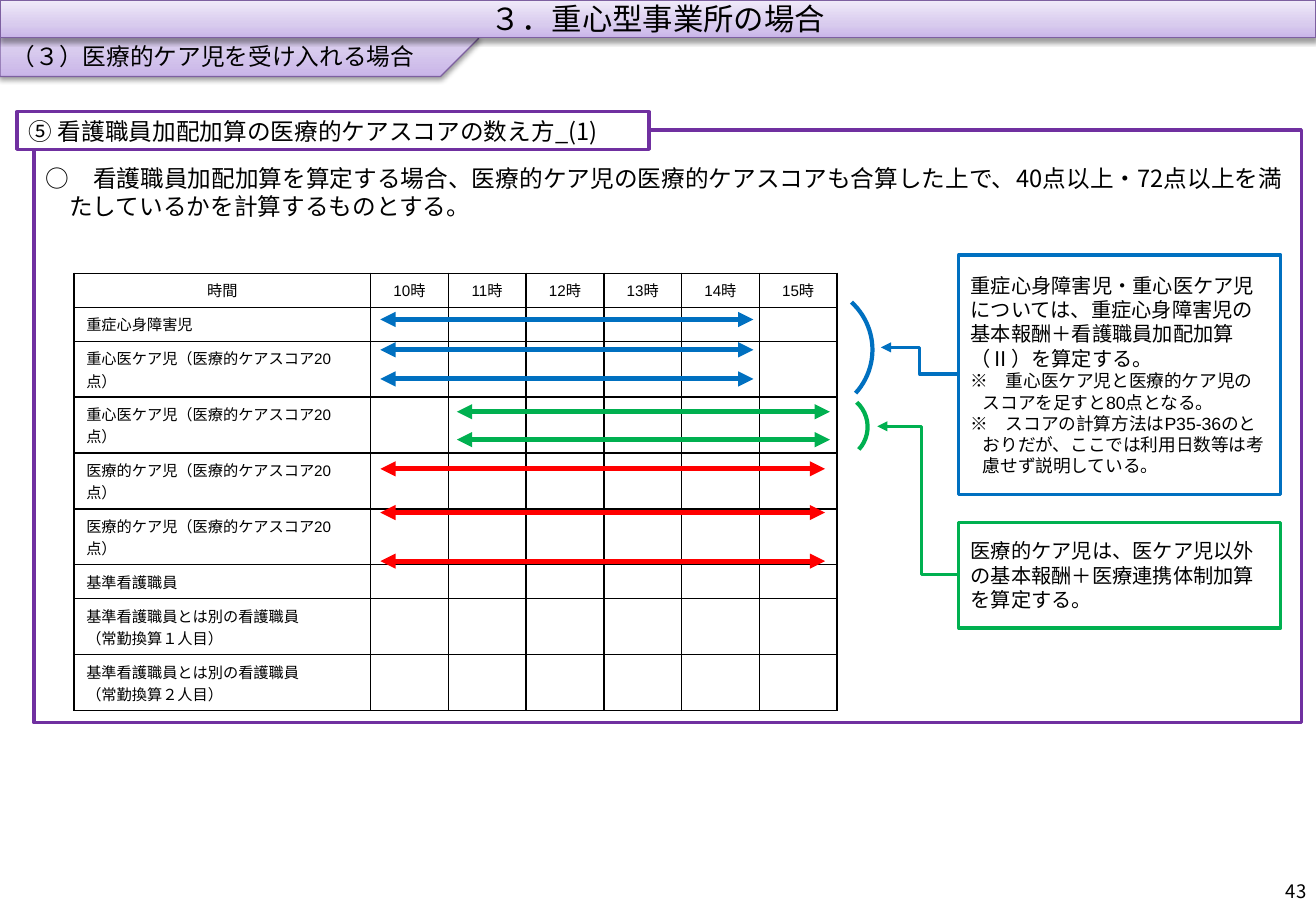
from lxml import etree
from pptx import Presentation
from pptx import util as u
from pptx.dml.color import RGBColor
from pptx.enum import shapes, text
from pptx.oxml import ns, parse_xml

BLACK = RGBColor(0x00, 0x00, 0x00)
WHITE = RGBColor(0xFF, 0xFF, 0xFF)
PURPLE = RGBColor(0x70, 0x30, 0xA0)
HEADER_LINE = RGBColor(0x7D, 0x60, 0xA0)
HEADER_STOPS = [(0, RGBColor(0xC9, 0xB5, 0xE8)), (35, RGBColor(0xD8, 0xCB, 0xEE)),
                (100, RGBColor(0xF0, 0xEA, 0xF9))]
BLUE = RGBColor(0x00, 0x70, 0xC0)
GREEN = RGBColor(0x00, 0xB0, 0x50)
RED = RGBColor(0xFF, 0x00, 0x00)

CJK_FONT = "Noto Sans CJK JP"
TOP, MIDDLE, BOTTOM = (text.MSO_ANCHOR.TOP, text.MSO_ANCHOR.MIDDLE, text.MSO_ANCHOR.BOTTOM)
LEFT, CENTER, RIGHT = text.PP_ALIGN.LEFT, text.PP_ALIGN.CENTER, text.PP_ALIGN.RIGHT

HOURS = [f"{hour}時" for hour in range(10, 16)]
SCORED_HEAVY = "重心医ケア児（医療的ケアスコア20点）"
SCORED_CARE = "医療的ケア児（医療的ケアスコア20点）"
EXTRA_NURSE = "基準看護職員とは別の看護職員\n（常勤換算{}人目）"
# Row label, row height
TABLE_ROWS = [("重症心身障害児", 0.28), (SCORED_HEAVY, 0.46), (SCORED_HEAVY, 0.46),
              (SCORED_CARE, 0.46), (SCORED_CARE, 0.46), ("基準看護職員", 0.28),
              (EXTRA_NURSE.format("１"), 0.46), (EXTRA_NURSE.format("２"), 0.46)]
# Start, end, colour, heights of the attendance arrows
STAYS = [(3.13, 6.2, BLUE, (2.63, 2.88, 3.12)),
         (3.76, 6.83, GREEN, (3.39, 3.62)),
         (3.13, 6.79, RED, (3.86, 4.22, 4.62))]


def apply(target, values):
    for name, value in values.items():
        setattr(target, name, value)


def add_xml(parent, tag, **attributes):
    element = etree.SubElement(parent, ns.qn(tag))
    for name, value in attributes.items():
        element.set(name, str(value))
    return element


def write_paragraph(paragraph, content, size, font=CJK_FONT, align=LEFT, indent=0, spacing=1.2):
    paragraph.alignment = align
    if spacing:
        paragraph.line_spacing = u.Pt(round(size * spacing, 1))
    if indent:
        properties = paragraph._p.get_or_add_pPr()
        properties.set("marL", str(u.Inches(indent)))
        properties.set("indent", str(-u.Inches(indent)))
    if not content:
        paragraph._p.get_or_add_endParaRPr().set("sz", str(size * 100))
        return
    run = paragraph.add_run()
    run.text = content
    apply(run.font, {"size": u.Pt(size), "name": font})
    run.font.color.rgb = BLACK
    add_xml(run._r.get_or_add_rPr(), "a:ea", typeface=CJK_FONT)


def write_text(shape, paragraphs, anchor=MIDDLE, insets=(0.1, 0.05, 0.1, 0.05)):
    frame = shape.text_frame
    sides = ("margin_left", "margin_top", "margin_right", "margin_bottom")
    apply(frame, {"word_wrap": True, "vertical_anchor": anchor})
    apply(frame, {side: u.Inches(inset) for side, inset in zip(sides, insets)})
    for index, values in enumerate(paragraphs):
        paragraph = frame.add_paragraph() if index else frame.paragraphs[0]
        write_paragraph(paragraph, **values)


def add_outlined(slide, kind, box, color, width, fill=None):
    shape = slide.shapes.add_shape(kind, *map(u.Inches, box))
    shape.shadow.inherit = False
    if fill is None:
        shape.fill.background()
    else:
        shape.fill.solid()
        shape.fill.fore_color.rgb = fill
    shape.line.color.rgb = color
    shape.line.width = u.Pt(width)
    return shape


def add_header(slide, kind, box):
    shape = add_outlined(slide, kind, box, HEADER_LINE, 0.75)
    properties = shape._element.spPr
    stops = "".join(f'<a:gs pos="{position * 1000}"><a:srgbClr val="{color}"/></a:gs>'
                    for position, color in HEADER_STOPS)
    gradient = parse_xml(f'<a:gradFill {ns.nsdecls("a")} rotWithShape="1"><a:gsLst>{stops}</a:gsLst>'
                         '<a:lin ang="16200000" scaled="0"/></a:gradFill>')
    properties.replace(properties.find(ns.qn("a:noFill")), gradient)
    shadow = add_xml(properties.find(ns.qn("a:effectLst")), "a:outerShdw", blurRad=u.Pt(3.1),
                     dist=u.Pt(1.6), dir=5400000, rotWithShape=0)
    add_xml(add_xml(shadow, "a:srgbClr", val=BLACK), "a:alpha", val=38000)
    return shape


def add_arrow(slide, kind, start, end, color, width, heads, bend=None):
    connector = slide.shapes.add_connector(kind, *map(u.Inches, start + end))
    connector.line.color.rgb = color
    connector.line.width = u.Pt(width)
    line = connector.line._get_or_add_ln()
    for head in heads:
        add_xml(line, head, type="triangle")
    properties = connector._element.spPr
    add_xml(properties, "a:effectLst")
    if bend is not None:
        geometry = properties.find(ns.qn("a:prstGeom"))
        for guides in geometry.findall(ns.qn("a:avLst")):
            geometry.remove(guides)
        add_xml(add_xml(geometry, "a:avLst"), "a:gd", name="adj1", fmla=f"val {round(bend * 100000)}")


def add_arc(slide, box, color):
    add_outlined(slide, shapes.MSO_SHAPE.ARC, box, color, 2.5).rotation = 42.4


def format_cell(cell, content, align):
    properties = cell._tc.get_or_add_tcPr()
    for side in ("a:lnL", "a:lnR", "a:lnT", "a:lnB"):
        border = add_xml(properties, side, w=u.Pt(1))
        add_xml(add_xml(border, "a:solidFill"), "a:srgbClr", val=BLACK)
    cell.fill.solid()
    cell.fill.fore_color.rgb = WHITE
    for index, part in enumerate(content.split("\n")):
        paragraph = cell.text_frame.add_paragraph() if index else cell.text_frame.paragraphs[0]
        write_paragraph(paragraph, part, 9, "Arial", align, spacing=None)


def add_schedule(slide):
    rows = [("時間", 0.28)] + TABLE_ROWS
    height = sum(row_height for _, row_height in rows)
    table = slide.shapes.add_table(len(rows), len(HOURS) + 1, u.Inches(0.61), u.Inches(2.25),
                                   u.Inches(6.28), u.Inches(height)).table
    apply(table, {"first_row": False, "horz_banding": False})
    for index, column in enumerate(table.columns):
        column.width = u.Inches(0.64 if index else 2.44)
    for row_index, (label, row_height) in enumerate(rows):
        table.rows[row_index].height = u.Inches(row_height)
        contents = [label] + (HOURS if row_index == 0 else [""] * len(HOURS))
        for column_index, content in enumerate(contents):
            format_cell(table.cell(row_index, column_index), content, LEFT if row_index else CENTER)


def main():
    presentation = Presentation()
    apply(presentation, {"slide_width": u.Inches(10.83), "slide_height": u.Inches(7.5)})
    slide = presentation.slides.add_slide(presentation.slide_layouts[6])
    preset, line_kind = shapes.MSO_SHAPE, shapes.MSO_CONNECTOR

    # Page number
    number = slide.shapes.add_textbox(*map(u.Inches, (8.32, 7.14, 2.53, 0.4)))
    write_text(number, [{"content": "43", "size": 11, "align": RIGHT}])

    # Main frame with its explanation
    frame = add_outlined(slide, preset.RECTANGLE, (0.28, 1.07, 10.43, 4.88), PURPLE, 2)
    write_text(frame, [{"content": "○　看護職員加配加算を算定する場合、医療的ケア児の医療的ケアスコアも合算した上で、"
                                   "40点以上・72点以上を満たしているかを計算するものとする。",
                        "size": 14, "indent": 0.19}], TOP, (0.1, 0.28, 0.1, 0.08))

    # Headers
    section = add_header(slide, preset.PENTAGON, (0, 0, 3.94, 0.63))
    write_text(section, [{"content": "（３）医療的ケア児を受け入れる場合", "size": 14}], BOTTOM)
    title = add_header(slide, preset.RECTANGLE, (0, 0, 10.83, 0.31))
    write_text(title, [{"content": "３．重心型事業所の場合", "size": 18, "align": CENTER}])
    topic = add_outlined(slide, preset.RECTANGLE, (0.14, 0.92, 5.2, 0.31), PURPLE, 2, WHITE)
    write_text(topic, [{"content": "⑤ 看護職員加配加算の医療的ケアスコアの数え方_(1)",
                        "size": 14, "indent": 0.19}], insets=(0.1, 0.08, 0.1, 0.08))

    # Schedule with attendance arrows
    add_schedule(slide)
    for start, end, color, heights in STAYS:
        for y in heights:
            add_arrow(slide, line_kind.STRAIGHT, (start, y), (end, y), color, 3,
                      ("a:headEnd", "a:tailEnd"))

    # Brackets beside the schedule
    add_arc(slide, (6.12, 2.35, 1.06, 1.06), BLUE)
    add_arc(slide, (6.59, 3.24, 0.55, 0.55), GREEN)

    # Notes and their connectors
    note_format = {"size": 10.5, "font": "Arial", "indent": 0.1}
    heavy_note = add_outlined(slide, preset.RECTANGLE, (7.89, 2.1, 2.65, 1.97), BLUE, 2, WHITE)
    write_text(heavy_note, [
        {"content": "重症心身障害児・重心医ケア児については、重症心身障害児の基本報酬＋看護職員加配加算（Ⅱ）を算定する。",
         "size": 12, "font": "Calibri"},
        {"content": "※　重心医ケア児と医療的ケア児のスコアを足すと80点となる。", **note_format},
        {"content": "※　スコアの計算方法はP35-36のとおりだが、ここでは利用日数等は考慮せず説明している。",
         **note_format}])
    care_note = add_outlined(slide, preset.RECTANGLE, (7.89, 4.3, 2.65, 0.87), GREEN, 2, WHITE)
    write_text(care_note, [{"content": "医療的ケア児は、医ケア児以外の基本報酬＋医療連携体制加算を算定する。",
                            "size": 12, "font": "Calibri"}])
    for start, end, color, bend in [((7.89, 3.08), (7.25, 2.86), BLUE, 0.5),
                                    ((7.89, 4.73), (7.22, 3.51), GREEN, 0.46)]:
        add_arrow(slide, line_kind.ELBOW, start, end, color, 2, ("a:tailEnd",), bend)

    presentation.save("out.pptx")


if __name__ == "__main__":
    main()
